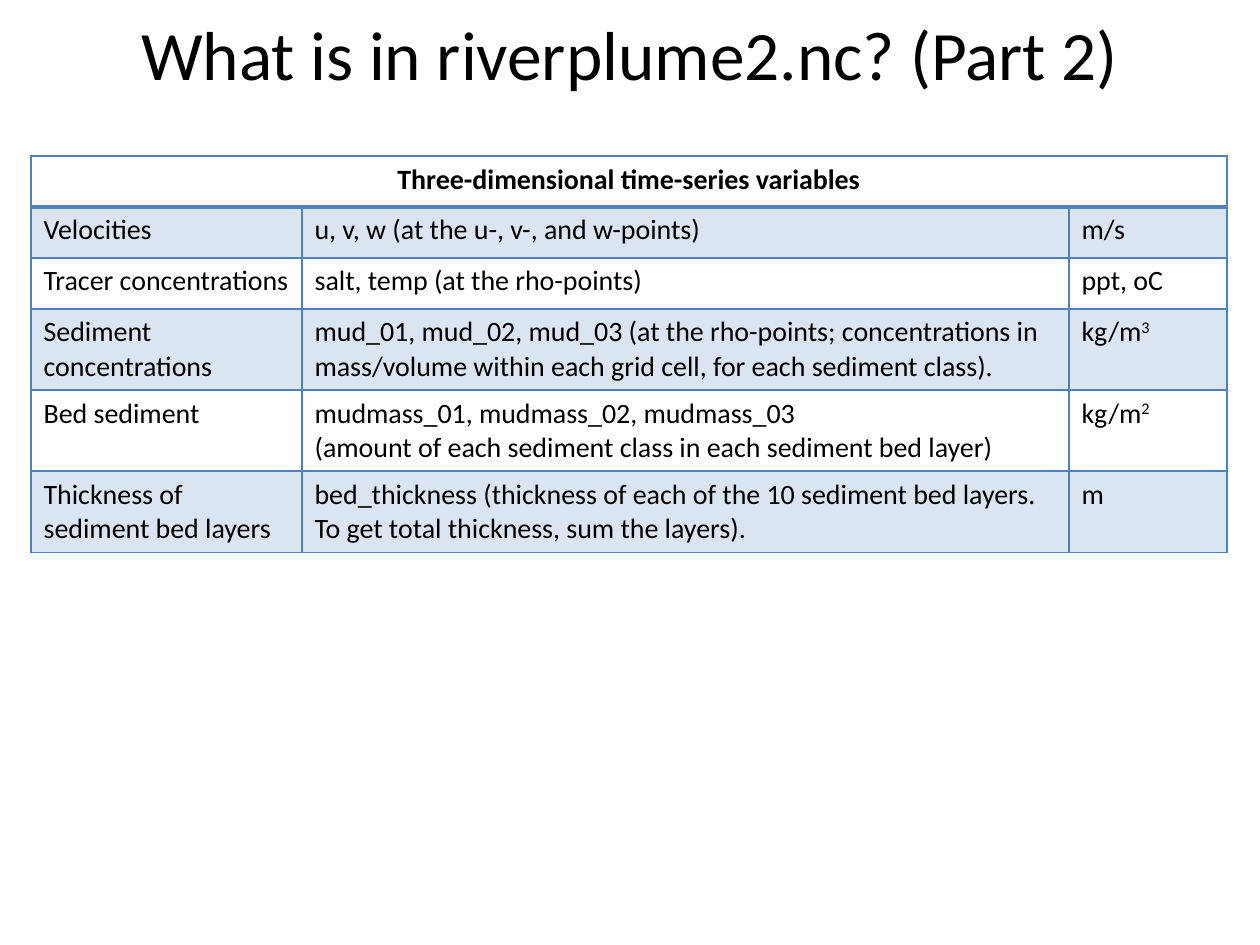
from lxml.etree import SubElement
from pptx import Presentation
from pptx.dml.color import RGBColor
from pptx.enum.text import MSO_ANCHOR, MSO_AUTO_SIZE, PP_ALIGN
from pptx.oxml.ns import qn
from pptx.util import Emu, Pt

EMU_PER_PX = 914400 / 126
BLACK = RGBColor(0x00, 0x00, 0x00)
BLUE = RGBColor(0x4F, 0x81, 0xBD)
FONT = "Calibri"

TITLE = "What is in riverplume2.nc? (Part 2)"
HEADING = "Three-dimensional time-series variables"
COLUMN_WIDTHS = [271, 767, 158]
ONE_LINE, TWO_LINES = 51, 81
# A caret marks the start of a superscript; \v is a line break.
VARIABLES = [
    (ONE_LINE, "Velocities", "u, v, w (at the u-, v-, and w-points)", "m/s"),
    (ONE_LINE, "Tracer concentrations", "salt, temp (at the rho-points)", "ppt, oC"),
    (TWO_LINES, "Sediment concentrations",
     "mud_01, mud_02, mud_03 (at the rho-points; concentrations in "
     "mass/volume within each grid cell, for each sediment class).", "kg/m^3"),
    (TWO_LINES, "Bed sediment",
     "mudmass_01, mudmass_02, mudmass_03\v"
     "(amount of each sediment class in each sediment bed layer)", "kg/m^2"),
    (TWO_LINES, "Thickness of sediment bed layers",
     "bed_thickness (thickness of each of the 10 sediment bed layers. "
     "To get total thickness, sum the layers).", "m"),
]


def px(length):
    return Emu(round(length * EMU_PER_PX))


def style_runs(paragraph, size, bold=False):
    for run in paragraph.runs:
        run.font.name = FONT
        run.font.size = Pt(size)
        run.font.bold = bold
        run.font.color.rgb = BLACK


def add_title(slide):
    title = slide.shapes.title
    title.left, title.top, title.width, title.height = px(63), px(23), px(1134), px(60)
    frame = title.text_frame
    frame.text = TITLE
    frame.auto_size = MSO_AUTO_SIZE.NONE
    frame.vertical_anchor = MSO_ANCHOR.MIDDLE
    frame.paragraphs[0].alignment = PP_ALIGN.CENTER
    style_runs(frame.paragraphs[0], 39.6)


def set_borders(cell, top=1, bottom=1):
    """Draw the four cell edges; widths are in points."""
    properties = cell._tc.get_or_add_tcPr()
    for edge, width in (("L", 1), ("R", 1), ("T", top), ("B", bottom)):
        line = SubElement(properties, qn(f"a:ln{edge}"), w=str(Pt(width)))
        fill = SubElement(line, qn("a:solidFill"))
        SubElement(fill, qn("a:srgbClr"), val=str(BLUE))


def set_fill(cell, tinted):
    if not tinted:
        cell.fill.background()
        return
    cell.fill.solid()
    cell.fill.fore_color.rgb = BLUE
    color = cell._tc.tcPr.find(qn("a:solidFill")).find(qn("a:srgbClr"))
    SubElement(color, qn("a:alpha"), val="20000")


def write_cell(cell, text, bold=False):
    base, _, exponent = text.partition("^")
    paragraph = cell.text_frame.paragraphs[0]
    paragraph.text = base
    if exponent:
        superscript = paragraph.add_run()
        superscript.text = exponent
        superscript.font._element.set("baseline", "30000")
    style_runs(paragraph, 16, bold)


def add_variable_table(slide):
    heights = [ONE_LINE] + [height for height, *_ in VARIABLES]
    table = slide.shapes.add_table(
        len(heights), len(COLUMN_WIDTHS), px(31), px(156),
        px(sum(COLUMN_WIDTHS)), px(sum(heights))).table
    table.first_row = table.horz_banding = False
    for column, width in zip(table.columns, COLUMN_WIDTHS):
        column.width = px(width)
    for row, height in zip(table.rows, heights):
        row.height = px(height)

    for heading_cell in table.rows[0].cells:
        set_borders(heading_cell, bottom=2)
        set_fill(heading_cell, False)
    heading = table.cell(0, 0)
    heading.merge(table.cell(0, len(COLUMN_WIDTHS) - 1))
    write_cell(heading, HEADING, bold=True)
    heading.text_frame.paragraphs[0].alignment = PP_ALIGN.CENTER

    for row, (_, *texts) in enumerate(VARIABLES, start=1):
        for column, text in enumerate(texts):
            cell = table.cell(row, column)
            set_borders(cell, top=2 if row == 1 else 1)
            set_fill(cell, row % 2 == 1)
            write_cell(cell, text)


def main():
    deck = Presentation()
    deck.slide_width, deck.slide_height = px(1260), px(945)
    slide = deck.slides.add_slide(deck.slide_layouts[5])
    add_title(slide)
    add_variable_table(slide)
    deck.save("out.pptx")


if __name__ == "__main__":
    main()
